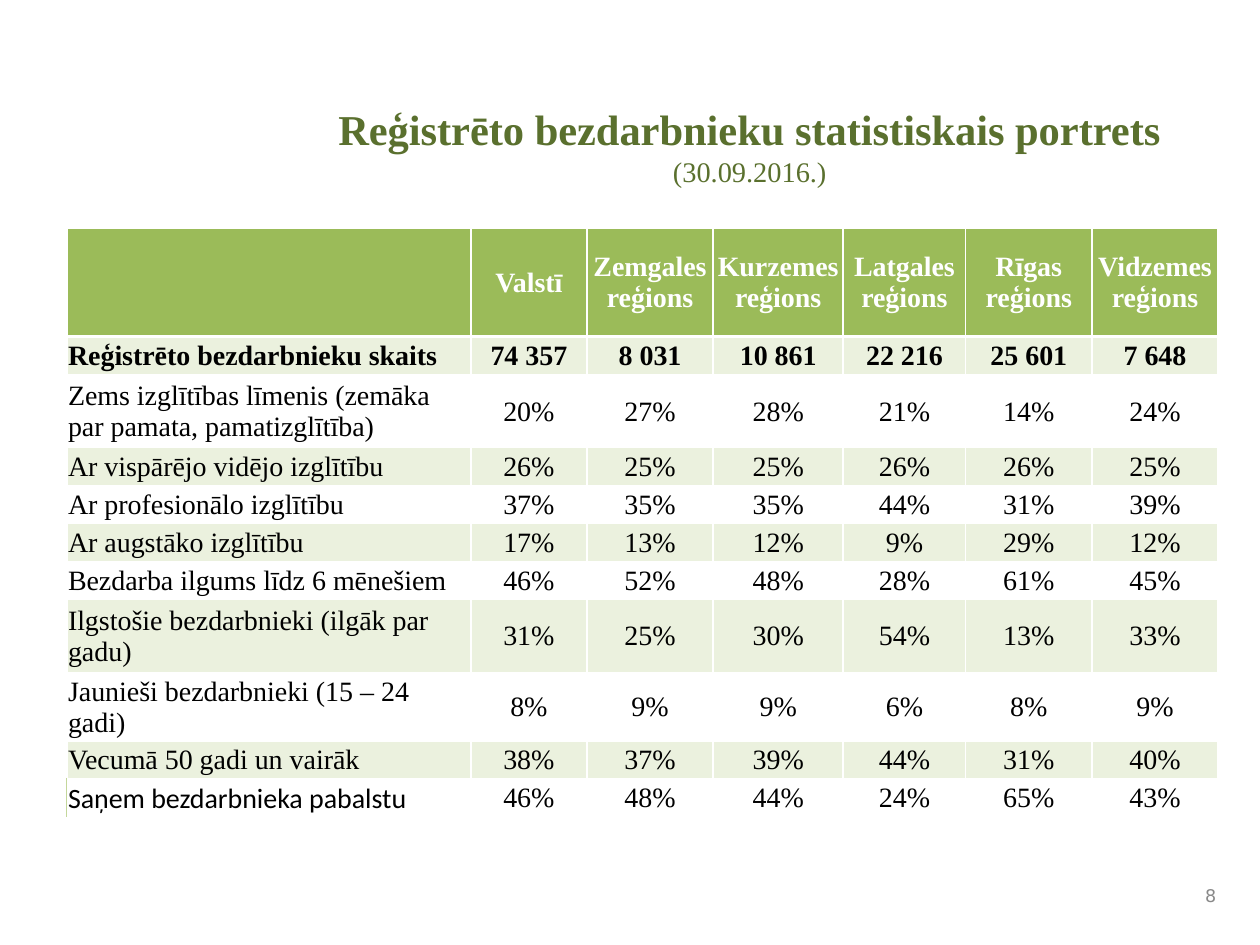
import pptx
import pptx.dml.color
import pptx.enum.text
import pptx.oxml
import pptx.util
from pptx.oxml.ns import nsdecls

ANCHOR = pptx.enum.text.MSO_ANCHOR
ALIGN = pptx.enum.text.PP_ALIGN
SLIDE_WIDTH, SLIDE_HEIGHT = 10, 7.5
SERIF = "Times New Roman"
CELL_MARGINS = {"margin_left": 0.01, "margin_top": 0.01, "margin_right": 0.01, "margin_bottom": 0}
COLUMN_WIDTHS = [3.2, 0.92, 1, 1.03, 0.97, 1, 1]
ROW_HEIGHTS = [0.86, 0.3, 0.58, 0.3, 0.3, 0.3, 0.3, 0.58, 0.52, 0.3, 0.3]
STATISTICS = [
    ["", "Valstī"] + [f"{name} reģions" for name in
                      ("Zemgales", "Kurzemes", "Latgales", "Rīgas", "Vidzemes")],
    ["Reģistrēto bezdarbnieku skaits", "74 357", "8 031", "10 861", "22 216", "25 601", "7 648"],
    ["Zems izglītības līmenis (zemāka par pamata, pamatizglītība)", 20, 27, 28, 21, 14, 24],
    ["Ar vispārējo vidējo izglītību", 26, 25, 25, 26, 26, 25],
    ["Ar profesionālo izglītību", 37, 35, 35, 44, 31, 39],
    ["Ar augstāko izglītību", 17, 13, 12, 9, 29, 12],
    ["Bezdarba ilgums līdz 6 mēnešiem", 46, 52, 48, 28, 61, 45],
    ["Ilgstošie bezdarbnieki (ilgāk par gadu)", 31, 25, 30, 54, 13, 33],
    ["Jaunieši bezdarbnieki (15 – 24 gadi)", 8, 9, 9, 6, 8, 9],
    ["Vecumā 50 gadi un vairāk", 38, 37, 39, 44, 31, 40],
    ["Saņem bezdarbnieka pabalstu", 46, 48, 44, 24, 65, 43],
]


def hex_color(value):
    """Turn a hex string into a colour."""
    return pptx.dml.color.RGBColor.from_string(value)


def set_attributes(target, values):
    """Set each named attribute of the target."""
    for name, value in values.items():
        setattr(target, name, value)


def set_margins(target, margins):
    """Set margins given in inches."""
    set_attributes(target, {name: pptx.util.Inches(value) for name, value in margins.items()})


def add_run(paragraph, text, size, color, font_name=SERIF, bold=False):
    """Append a formatted run to the paragraph."""
    run = paragraph.add_run()
    run.text = text
    set_attributes(run.font, {"size": pptx.util.Pt(size), "name": font_name, "bold": bold})
    run.font.color.rgb = hex_color(color)


def add_text_box(slide, box, anchor, alignment):
    """Add a wrapping text box and return its first paragraph."""
    frame = slide.shapes.add_textbox(*map(pptx.util.Inches, box)).text_frame
    set_attributes(frame, {"word_wrap": True, "vertical_anchor": anchor})
    set_margins(frame, {"margin_left": 0.1, "margin_top": 0.09, "margin_right": 0.1,
                        "margin_bottom": 0.05})
    paragraph = frame.paragraphs[0]
    paragraph.alignment = alignment
    return paragraph


def add_title(slide, box):
    """Place the heading with its date on a second line."""
    paragraph = add_text_box(slide, box, ANCHOR.TOP, ALIGN.CENTER)
    add_run(paragraph, "Reģistrēto bezdarbnieku statistiskais portrets", 24.3, "5A702E", bold=True)
    paragraph.add_line_break()
    add_run(paragraph, "(30.09.2016.)", 16.2, "5A702E")


def add_page_number(slide, box):
    """Place the page number."""
    paragraph = add_text_box(slide, box, ANCHOR.MIDDLE, ALIGN.RIGHT)
    add_run(paragraph, "8", 10, "898989", "DejaVu Sans")


def set_border(cell, side, color, width):
    """Add one border line to a cell; sides go in the order L, R, T, B."""
    cell._tc.get_or_add_tcPr().append(pptx.oxml.parse_xml(
        f'<a:ln{side} {nsdecls("a")} w="{pptx.util.Pt(width)}"><a:solidFill>'
        f'<a:srgbClr val="{color}"/></a:solidFill></a:ln{side}>'))


def format_cell(cell, row, column, value):
    """Write a cell and style it by its row and column."""
    is_header, is_label = row == 0, column == 0
    is_last_label = is_label and row == len(STATISTICS) - 1
    for side in "LRTB":
        thick = (row, side) in ((0, "B"), (1, "T"))
        color, width = "FFFFFF", 1.5 if thick else 1
        if is_last_label and side == "L":
            color, width = "C4D79B", 0.5
        set_border(cell, side, color, width)
    if row % 2 or is_header:
        cell.fill.solid()
        cell.fill.fore_color.rgb = hex_color("9BBB59" if is_header else "EBF1DE")
    else:
        cell.fill.background()
    set_margins(cell, CELL_MARGINS)
    cell.vertical_anchor = ANCHOR.BOTTOM if is_last_label else ANCHOR.MIDDLE
    paragraph = cell.text_frame.paragraphs[0]
    paragraph.alignment = ALIGN.LEFT if is_label else ALIGN.CENTER
    if value:
        add_run(paragraph, f"{value}%" if isinstance(value, int) else value, 16,
                "FFFFFF" if is_header else "000000",
                "Calibri" if is_last_label else SERIF, row < 2)


def add_statistics_table(slide, box):
    """Place the table, sharing the box out by column widths and row heights."""
    left, top, width, height = map(pptx.util.Inches, box)
    table = slide.shapes.add_table(len(ROW_HEIGHTS), len(COLUMN_WIDTHS),
                                   left, top, width, height).table
    set_attributes(table, {"first_row": False, "horz_banding": False})
    for column, share in zip(table.columns, COLUMN_WIDTHS):
        column.width = int(width * share / sum(COLUMN_WIDTHS))
    for row, share in zip(table.rows, ROW_HEIGHTS):
        row.height = int(height * share / sum(ROW_HEIGHTS))
    for row, values in enumerate(STATISTICS):
        for column, value in enumerate(values):
            format_cell(table.cell(row, column), row, column, value)


def main():
    """Build and save the slide."""
    presentation = pptx.Presentation()
    set_attributes(presentation, {"slide_width": pptx.util.Inches(SLIDE_WIDTH),
                                  "slide_height": pptx.util.Inches(SLIDE_HEIGHT)})
    slide = presentation.slides.add_slide(presentation.slide_layouts[6])
    add_title(slide, (2.23, 0.73, 7.44, 0.92))
    add_page_number(slide, (9.33, 6.92, 0.42, 0.33))
    add_statistics_table(slide, (0.53, 1.81, 9.14, 4.65))
    presentation.save("out.pptx")


if __name__ == "__main__":
    main()
